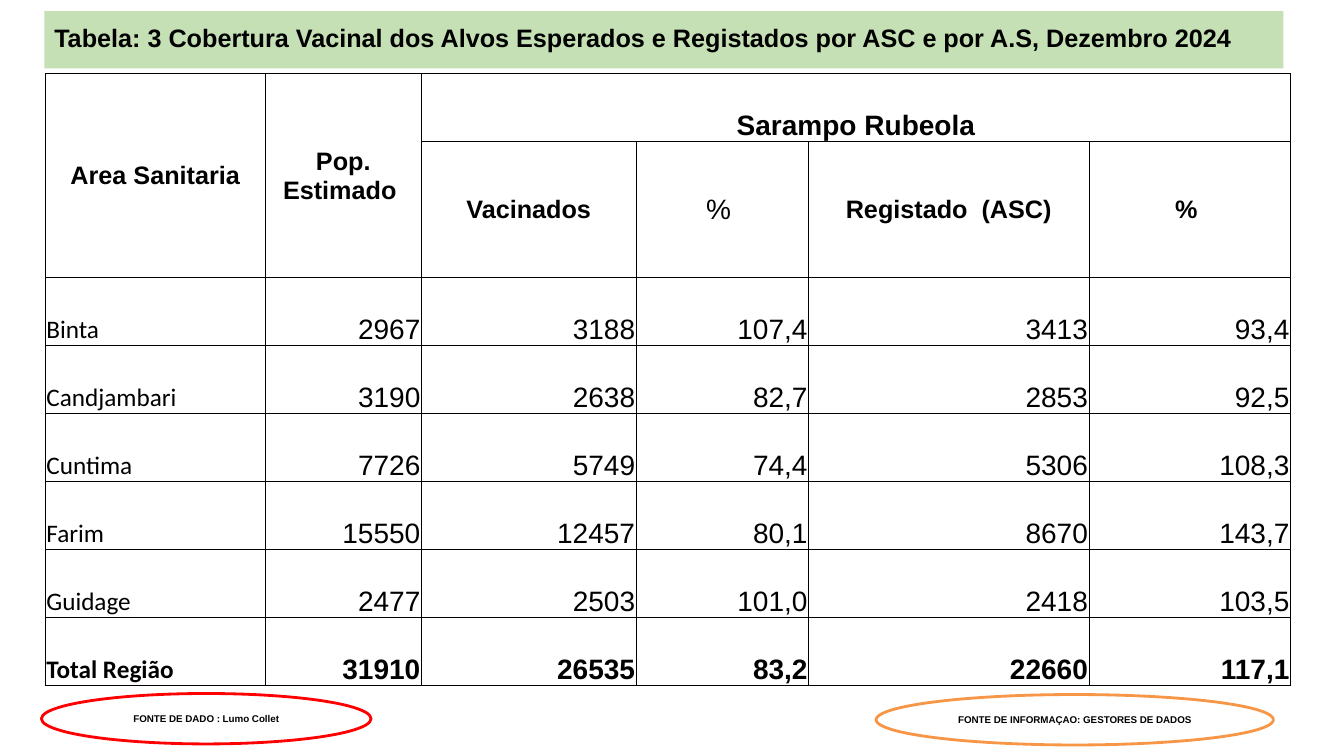
from dataclasses import dataclass
from lxml import etree
from pptx import Presentation
from pptx import util as u
from pptx.dml.color import RGBColor
from pptx.enum import shapes, text
from pptx.oxml.ns import qn

WIDE, HIGH = u.Inches(13.33), u.Inches(7.5)
BLACK, WHITE = "000000", "FFFFFF"
LEFT, MID, RIGHT = text.PP_ALIGN.LEFT, text.PP_ALIGN.CENTER, text.PP_ALIGN.RIGHT
CENTER, BOTTOM = text.MSO_ANCHOR.MIDDLE, text.MSO_ANCHOR.BOTTOM


@dataclass(frozen=True)
class Style:
    size: float
    bold: bool = True
    align: int = MID
    face: str = "Arial"
    anchor: int = CENTER


@dataclass(frozen=True)
class Panel:
    words: str
    box: tuple[float, float, float, float]
    kind: int
    style: Style
    fill: str | None = None
    line: str | None = None
    lead: float = 1.0


@dataclass(frozen=True)
class Head:
    words: str
    row: int
    col: int
    rows: int = 1
    cols: int = 1
    style: Style = Style(18)


OVAL = shapes.MSO_SHAPE.OVAL
PANELS = [
    Panel("Tabela: 3 Cobertura Vacinal dos Alvos Esperados e Registados por ASC e por A.S, Dezembro 2024",
          (3.3, 1.47, 92.2, 7.6), shapes.MSO_SHAPE.RECTANGLE, Style(18, align=LEFT), "C5E0B4", lead=0.9),
    Panel("FONTE DE DADO : Lumo Collet", (3.08, 91.73, 24.53, 6.67), OVAL, Style(7), line="FF0000"),
    Panel("FONTE DE INFORMAÇAO: GESTORES DE DADOS", (65.19, 91.87, 29.56, 6.67), OVAL, Style(7), WHITE, "F79646"),
]

COLS = [16.35, 11.63, 15.98, 12.83, 20.86, 15]
STEP = 8.99
SPANS = [1, 2, 1, 1, 1, 1, 1, 1]
HEADS = [
    Head("Area Sanitaria", 0, 0, rows=2),
    Head("Pop.\nEstimado ", 0, 1, rows=2),
    Head("Sarampo Rubeola", 0, 2, cols=4, style=Style(20, anchor=BOTTOM)),
    Head(" Vacinados ", 1, 2),
    Head("% ", 1, 3, style=Style(20, bold=False)),
    Head("Registado  (ASC)", 1, 4),
    Head("% ", 1, 5),
]
AREAS = [
    ("Binta", "2967", "3188", "107,4", "3413", "93,4"),
    ("Candjambari", "3190", "2638", "82,7", "2853", "92,5"),
    ("Cuntima", "7726", "5749", "74,4", "5306", "108,3"),
    ("Farim", "15550", "12457", "80,1", "8670", "143,7"),
    ("Guidage", "2477", "2503", "101,0", "2418", "103,5"),
    ("Total Região", "31910", "26535", "83,2", "22660", "117,1"),
]


def across(share: float) -> int:
    return round(WIDE * share / 100)


def down(share: float) -> int:
    return round(HIGH * share / 100)


def paint(item, shade: str | None) -> None:
    if shade is None:
        item.background()
    else:
        item.solid()
        item.fore_color.rgb = RGBColor.from_string(shade)


def write(frame, words: str, style: Style, lead: float = 1.0) -> None:
    frame.text = words
    for para in frame.paragraphs:
        para.alignment = style.align
        para.line_spacing = lead
        font = para.font
        font.name, font.size, font.bold = style.face, u.Pt(style.size), style.bold
        paint(font.fill, BLACK)


def add_panel(slide, panel: Panel) -> None:
    x, y, w, h = panel.box
    shape = slide.shapes.add_shape(panel.kind, across(x), down(y), across(w), down(h))
    shape.shadow.inherit = False
    paint(shape.fill, panel.fill)
    paint(shape.line.fill, panel.line)
    if panel.line:
        shape.line.width = u.Pt(2)
    frame = shape.text_frame
    frame.word_wrap = True
    frame.vertical_anchor = panel.style.anchor
    write(frame, panel.words, panel.style, panel.lead)


def frame_cell(cell) -> None:
    paint(cell.fill, WHITE)
    cell.margin_left = cell.margin_right = cell.margin_top = u.Inches(0.01)
    cell.margin_bottom = 0
    props = cell._tc.get_or_add_tcPr()
    for spot, side in enumerate(("lnL", "lnR", "lnT", "lnB")):
        edge = etree.Element(qn("a:" + side), w=str(u.Pt(0.5)))
        fill = etree.SubElement(edge, qn("a:solidFill"))
        etree.SubElement(fill, qn("a:srgbClr"), val=BLACK)
        props.insert(spot, edge)


def fill_cell(cell, words: str, style: Style) -> None:
    cell.vertical_anchor = style.anchor
    write(cell.text_frame, words, style)


def add_grid(slide) -> None:
    grid = slide.shapes.add_table(len(SPANS), len(COLS), across(3.38), down(9.76),
                                  across(sum(COLS)), down(STEP * sum(SPANS))).table
    grid.first_row = grid.horz_banding = False
    for col, share in zip(grid.columns, COLS):
        col.width = across(share)
    for row, span in zip(grid.rows, SPANS):
        row.height = down(STEP * span)
    for cell in grid.iter_cells():
        frame_cell(cell)
    for head in HEADS:
        cell = grid.cell(head.row, head.col)
        if head.rows * head.cols > 1:
            cell.merge(grid.cell(head.row + head.rows - 1, head.col + head.cols - 1))
        fill_cell(cell, head.words, head.style)
    for r, area in enumerate(AREAS, 2):
        last = area is AREAS[-1]
        name = Style(18, last, LEFT, "Calibri", BOTTOM)
        count = Style(20, last, RIGHT, anchor=BOTTOM)
        for c, words in enumerate(area):
            fill_cell(grid.cell(r, c), words, count if c else name)


def main() -> None:
    deck = Presentation()
    deck.slide_width, deck.slide_height = WIDE, HIGH
    slide = deck.slides.add_slide(deck.slide_layouts[6])
    title, *notes = PANELS
    add_panel(slide, title)
    add_grid(slide)
    for note in notes:
        add_panel(slide, note)
    deck.save("out.pptx")


if __name__ == "__main__":
    main()
